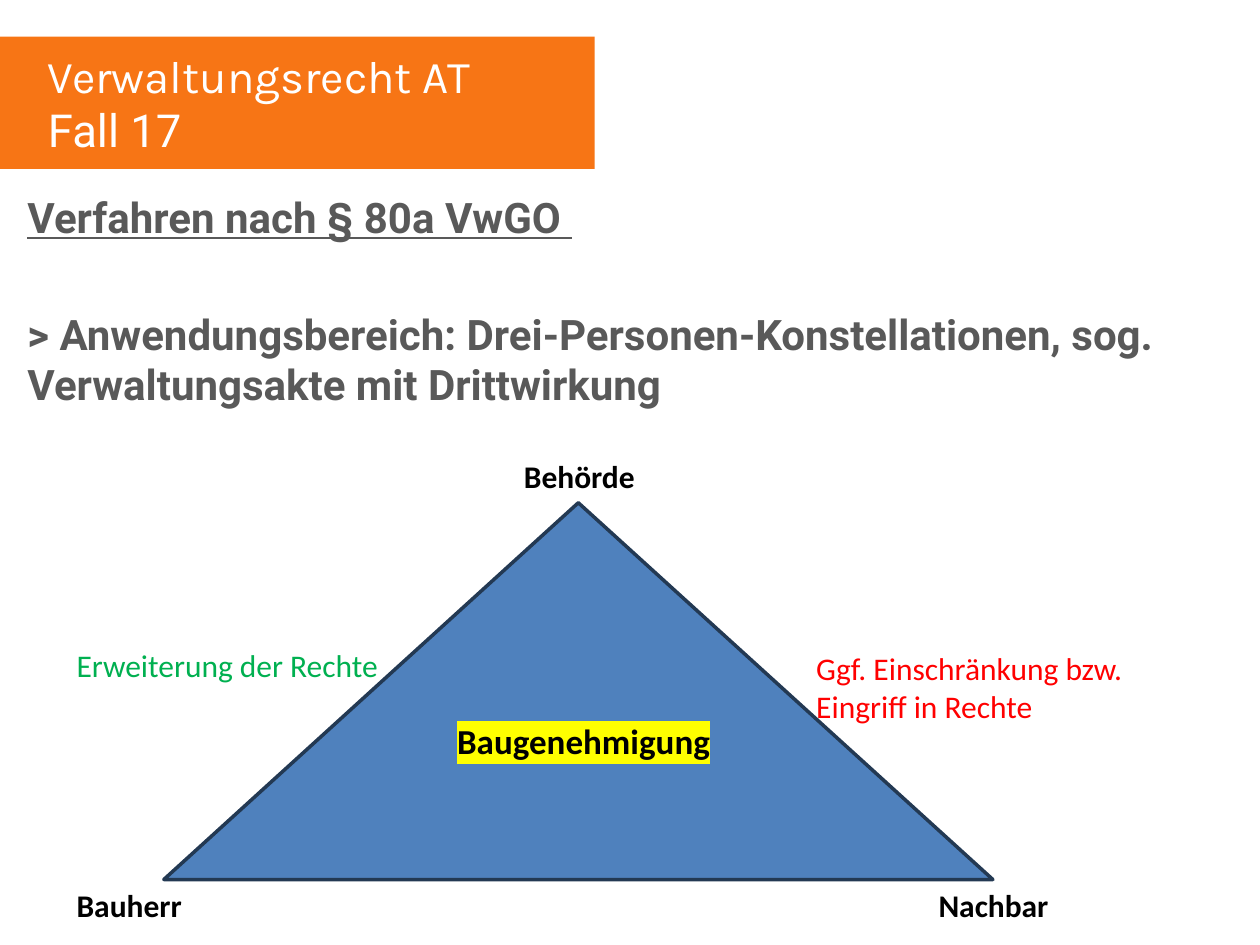
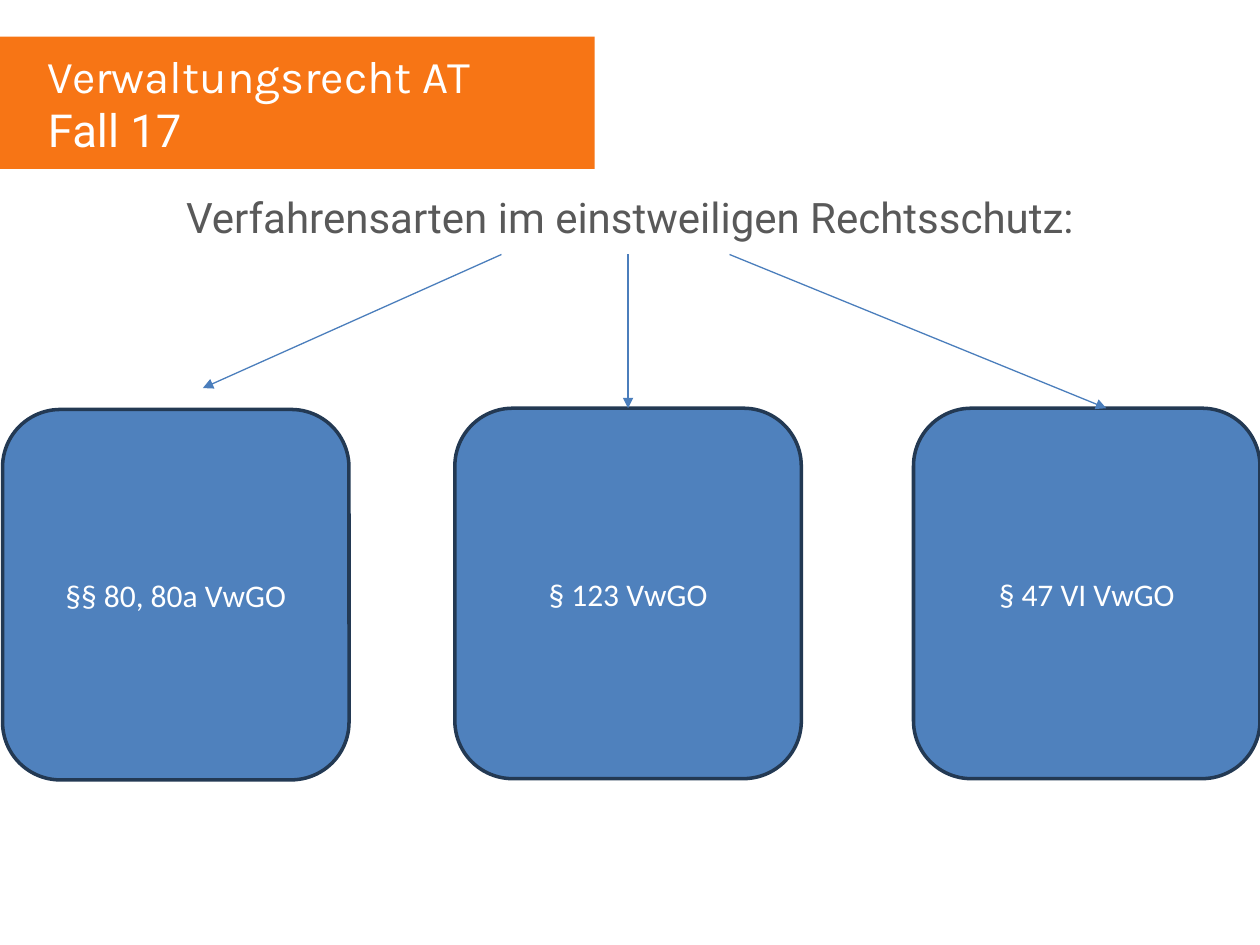
from dataclasses import dataclass
from typing import NamedTuple

from lxml.etree import SubElement
from pptx import Presentation
from pptx.dml.color import RGBColor
from pptx.enum.shapes import MSO_CONNECTOR, MSO_SHAPE
from pptx.enum.text import MSO_ANCHOR, MSO_AUTO_SIZE, PP_ALIGN
from pptx.oxml import parse_xml
from pptx.oxml.ns import nsdecls, qn
from pptx.util import Inches, Pt


@dataclass(frozen=True)
class Theme:
    band: str = "F77515"
    heading: str = "595959"
    fill: str = "4F81BD"
    outline: str = "233953"
    arrow: str = "4B7EBC"
    light: str = "FFFFFF"
    dark: str = "000000"
    gain: str = "00B050"
    loss: str = "FF0000"
    marker: str = "FFFF00"
    title_font: str = "Karla"
    heading_font: str = "Roboto"
    label_font: str = "Calibri"
    title_size: int = 26
    heading_size: int = 24
    emphasis_size: int = 20
    label_size: int = 18


THEME = Theme()


class Box(NamedTuple):
    left: float
    top: float
    width: float
    height: float

    def inner(self, dx, dy, width, height):
        return Box(self.left + dx, self.top + dy, width, height)

    def emu(self):
        return [Inches(length) for length in self]


TITLE_BAND = Box(0, 0.29, 4.72, 1.05)
TRIANGLE = Box(1.3, 3.99, 6.58, 2.99)
PROCEDURES = Box(0.02, 3.24, 9.98, 2.95)


def write(frame, text, font=THEME.label_font, size=THEME.label_size,
          color=THEME.dark, bold=False, underline=False, highlight=None,
          align=PP_ALIGN.LEFT, before=0, after=0, new_paragraph=False):
    """Write text into the first paragraph, or into an added one."""
    frame.word_wrap = True
    paragraph = frame.add_paragraph() if new_paragraph else frame.paragraphs[0]
    paragraph.alignment = align
    paragraph.space_before, paragraph.space_after = Pt(before), Pt(after)
    run = paragraph.add_run()
    run.text = text
    run.font.name, run.font.size = font, Pt(size)
    run.font.bold, run.font.underline = bold, underline
    run.font.color.rgb = RGBColor.from_string(color)
    if highlight:
        fill = run._r.get_or_add_rPr().find(qn("a:solidFill"))
        fill.addnext(parse_xml(f'<a:highlight {nsdecls("a")}>'
                               f'<a:srgbClr val="{highlight}"/></a:highlight>'))


def add_text(slide, box, text, **style):
    frame = slide.shapes.add_textbox(*box.emu()).text_frame
    write(frame, text, **style)
    return frame


def add_filled(slide, preset, box, fill, outline=None):
    shape = slide.shapes.add_shape(preset, *box.emu())
    shape.shadow.inherit = False
    shape.fill.solid()
    shape.fill.fore_color.rgb = RGBColor.from_string(fill)
    if outline:
        shape.line.color.rgb = RGBColor.from_string(outline)
        shape.line.width = Pt(2)
    else:
        shape.line.fill.background()
    return shape


def add_arrow(slide, start, end):
    arrow = slide.shapes.add_connector(
        MSO_CONNECTOR.STRAIGHT, *map(Inches, start + end))
    arrow.line.color.rgb = RGBColor.from_string(THEME.arrow)
    arrow.line.width = Pt(0.75)
    properties = arrow.element.spPr
    SubElement(properties.find(qn("a:ln")), qn("a:tailEnd"), type="triangle")
    SubElement(properties, qn("a:effectLst"))
    return arrow


def add_title_band(slide, box):
    band = add_filled(slide, MSO_SHAPE.RECTANGLE, box, THEME.band)
    title = slide.shapes.title
    title.element.addprevious(band.element)
    (title.left, title.top, title.width,
     title.height) = box.inner(0.28, 0.04, 4.72, 0.98).emu()
    frame = title.text_frame
    frame.auto_size = MSO_AUTO_SIZE.NONE
    frame.vertical_anchor = MSO_ANCHOR.TOP
    style = dict(size=THEME.title_size, color=THEME.light)
    write(frame, "Verwaltungsrecht AT", font=THEME.title_font, **style)
    write(frame, "Fall 17", font=THEME.heading_font, new_paragraph=True, **style)


def add_heading(slide, box, *paragraphs):
    """Each paragraph is a text and its own format."""
    frame = slide.shapes.add_textbox(*box.emu()).text_frame
    for index, (text, style) in enumerate(paragraphs):
        write(frame, text, font=THEME.heading_font, size=THEME.heading_size,
              color=THEME.heading, after=5, new_paragraph=index > 0, **style)


def add_triangle(slide, box):
    """Draw the three parties at the corners and the effects on the sides."""
    add_filled(slide, MSO_SHAPE.ISOSCELES_TRIANGLE, box, THEME.fill, THEME.outline)
    parties = (("Bauherr", -0.79, box.height), ("Nachbar", 6.05, box.height),
               ("Behörde", 2.76, -0.41))
    for party, dx, dy in parties:
        add_text(slide, box.inner(dx, dy, 1.61, 0.4), party, bold=True)
    add_text(slide, box.inner(2.23, 1.67, 2.76, 0.44), "Baugenehmigung",
             size=THEME.emphasis_size, bold=True, highlight=THEME.marker)
    add_text(slide, box.inner(-0.79, 1.09, 2.93, 0.4),
             "Erweiterung der Rechte", color=THEME.gain)
    add_text(slide, box.inner(5.08, 1.11, 2.93, 0.71),
             "Ggf. Einschränkung bzw. Eingriff in Rechte", color=THEME.loss)


def add_procedures(slide, box):
    """Draw the three kinds of procedure with arrows from the heading."""
    width, height = 2.75, 2.94
    cards = []
    for text, dx, dy in (("§§ 80, 80a VwGO", 0, 0.01),
                         ("§ 123 VwGO", 3.59, 0),
                         ("§ 47 VI VwGO", box.width - width, 0)):
        card = add_filled(slide, MSO_SHAPE.ROUNDED_RECTANGLE,
                          box.inner(dx, dy, width, height),
                          THEME.fill, THEME.outline)
        card.text_frame.vertical_anchor = MSO_ANCHOR.MIDDLE
        write(card.text_frame, text, color=THEME.light, align=PP_ALIGN.CENTER)
        cards.append(card)

    def arrow(start_dx, end_dx, end_dy):
        return add_arrow(slide, (box.left + start_dx, box.top - 1.22),
                         (box.left + end_dx, box.top + end_dy))

    middle = 3.59 + width / 2
    arrow(3.96, 1.59, -0.16)
    arrow(middle, middle, 0).end_connect(cards[1], 0)
    arrow(5.77, 8.76, 0)


def add_titled_slide(deck):
    slide = deck.slides.add_slide(deck.slide_layouts[5])
    add_title_band(slide, TITLE_BAND)
    return slide


def main():
    deck = Presentation()
    deck.slide_width, deck.slide_height = Inches(10), Inches(7.5)

    third_party = add_titled_slide(deck)
    add_heading(third_party, Box(0.12, 1.47, 9.76, 2.8),
                ("Verfahren nach § 80a VwGO ", dict(bold=True, underline=True)),
                ("> Anwendungsbereich: Drei-Personen-Konstellationen, sog. "
                 "Verwaltungsakte mit Drittwirkung", dict(bold=True, before=33)))
    add_triangle(third_party, TRIANGLE)

    interim_relief = add_titled_slide(deck)
    add_heading(interim_relief, Box(0.12, 1.47, 9.76, 1.45),
                ("Verfahrensarten im einstweiligen Rechtsschutz:",
                 dict(align=PP_ALIGN.CENTER)))
    add_procedures(interim_relief, PROCEDURES)

    deck.save("out.pptx")


if __name__ == "__main__":
    main()
